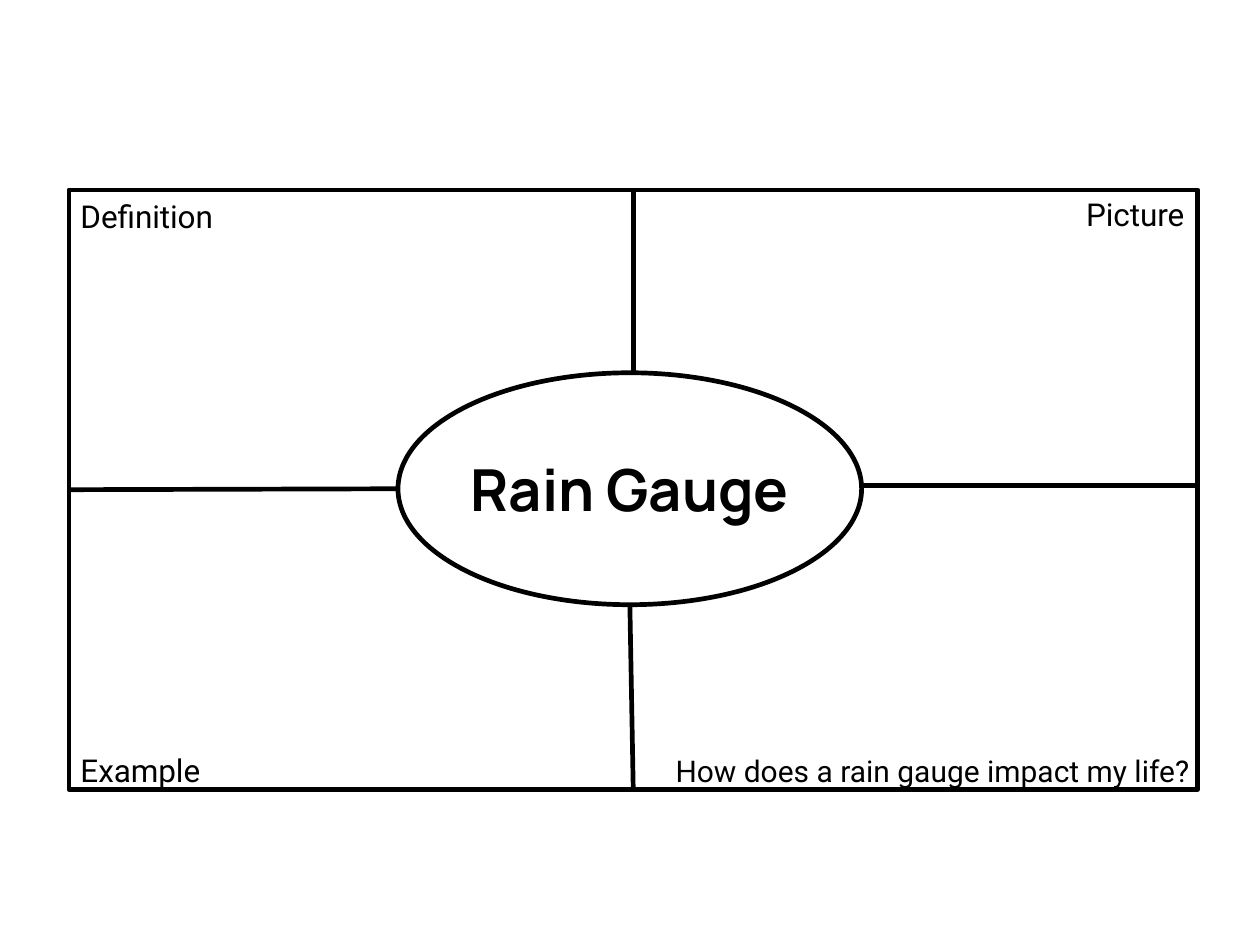
from lxml import etree
from pptx import Presentation
from pptx.dml.color import RGBColor
from pptx.enum.shapes import MSO_CONNECTOR, MSO_SHAPE
from pptx.enum.text import MSO_ANCHOR, MSO_AUTO_SIZE, PP_ALIGN
from pptx.oxml.ns import qn
from pptx.util import Pt

STRAIGHT = MSO_CONNECTOR.STRAIGHT
RECTANGLE, OVAL = MSO_SHAPE.RECTANGLE, MSO_SHAPE.OVAL
TOP, NO_FIT = MSO_ANCHOR.TOP, MSO_AUTO_SIZE.NONE
LEFT, CENTER, RIGHT = PP_ALIGN.LEFT, PP_ALIGN.CENTER, PP_ALIGN.RIGHT

BLACK, WHITE = "000000", "FFFFFF"
LINE_WIDTH = 2
FRAME_LEFT, FRAME_TOP, FRAME_WIDTH, FRAME_HEIGHT = 29.5, 81.4, 483.8, 257
OVAL_LEFT, OVAL_TOP, OVAL_WIDTH, OVAL_HEIGHT = 170.6, 159.8, 198.7, 99.4
FRAME_RIGHT, FRAME_BOTTOM = FRAME_LEFT + FRAME_WIDTH, FRAME_TOP + FRAME_HEIGHT
OVAL_RIGHT, OVAL_BOTTOM = OVAL_LEFT + OVAL_WIDTH, OVAL_TOP + OVAL_HEIGHT
OVAL_X, OVAL_Y = OVAL_LEFT + OVAL_WIDTH / 2, OVAL_TOP + OVAL_HEIGHT / 2


def color(hex_value):
    return RGBColor.from_string(hex_value)


def style_line(line):
    line.color.rgb = color(BLACK)
    line.width = Pt(LINE_WIDTH)


def add_outline(page, kind, left, top, width, height, fill=None):
    shape = page.shapes.add_shape(kind, Pt(left), Pt(top), Pt(width), Pt(height))
    shape.shadow.inherit = False
    if fill:
        shape.fill.solid()
        shape.fill.fore_color.rgb = color(fill)
    else:
        shape.fill.background()
    style_line(shape.line)
    return shape


def add_divider(page, x1, y1, x2, y2):
    divider = page.shapes.add_connector(STRAIGHT, Pt(x1), Pt(y1), Pt(x2), Pt(y2))
    style_line(divider.line)
    etree.SubElement(divider._element.spPr, qn("a:effectLst"))
    return divider


def write_text(box, text, font_name, size, align, bold=False):
    frame = box.text_frame
    frame.word_wrap = True
    frame.auto_size = NO_FIT
    frame.vertical_anchor = TOP
    frame.margin_left = frame.margin_right = Pt(5)
    frame.margin_top = frame.margin_bottom = Pt(3)
    para = frame.paragraphs[0]
    para.text = text
    para.alignment = align
    para.font.name = font_name
    para.font.size = Pt(size)
    para.font.bold = bold
    para.font.color.rgb = color(BLACK)


def add_label(page, text, left, top, width, size, align):
    box = page.shapes.add_textbox(Pt(left), Pt(top), Pt(width), Pt(21.5))
    write_text(box, text, "Roboto", size, align)


def place_title(page, text):
    title = page.shapes.title
    title.left, title.top, title.width, title.height = Pt(176.4), Pt(191.5), Pt(187.2), Pt(35.3)
    write_text(title, text, "Manrope", 24.8, CENTER, bold=True)
    page.shapes._spTree.append(title._element)


def main():
    deck = Presentation()
    deck.slide_width, deck.slide_height = Pt(540), Pt(405)
    page = deck.slides.add_slide(deck.slide_layouts[5])

    frame = add_outline(page, RECTANGLE, FRAME_LEFT, FRAME_TOP, FRAME_WIDTH, FRAME_HEIGHT)
    frame_x = FRAME_LEFT + FRAME_WIDTH / 2
    dividers = [
        (frame_x, OVAL_TOP, frame_x, FRAME_TOP, 0),
        (OVAL_LEFT, OVAL_Y, FRAME_LEFT, OVAL_Y, 1),
        (OVAL_X, OVAL_BOTTOM, frame_x, FRAME_BOTTOM, 2),
    ]
    for x1, y1, x2, y2, side in dividers:
        add_divider(page, x1, y1, x2, y2).end_connect(frame, side)
    add_divider(page, OVAL_RIGHT, 208.1, FRAME_RIGHT, 208.1)
    add_outline(page, OVAL, OVAL_LEFT, OVAL_TOP, OVAL_WIDTH, OVAL_HEIGHT, WHITE)

    place_title(page, "Rain Gauge")
    labels = [
        ("Definition", 29.5, 81.4, 70, 13.5, LEFT),
        ("Example", 29.5, 319, 70, 13.5, LEFT),
        ("Picture", 442.6, 80.6, 70, 13.5, RIGHT),
        ("How does a rain gauge impact my life?", 276.5, 319.7, 238.3, 12.8, RIGHT),
    ]
    for label in labels:
        add_label(page, *label)
    deck.save("out.pptx")


if __name__ == "__main__":
    main()
